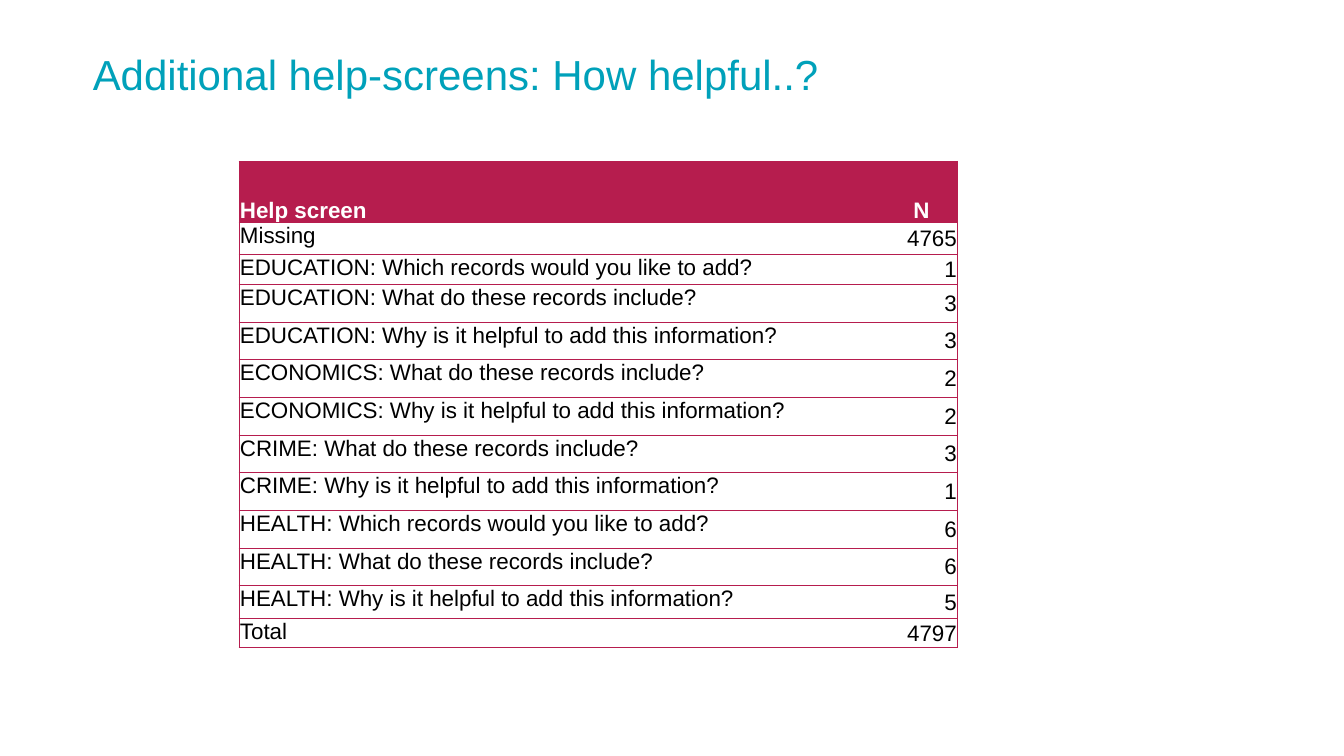
from dataclasses import dataclass

from lxml.etree import SubElement
from pptx import Presentation
from pptx.dml.color import RGBColor
from pptx.enum.text import MSO_ANCHOR, PP_ALIGN
from pptx.oxml.ns import qn
from pptx.util import Inches, Pt


@dataclass(frozen=True)
class Theme:
    font: str = "Arial"
    title_color: str = "00A1BA"
    accent: str = "B61D4E"
    light: str = "FFFFFF"
    dark: str = "000000"
    title_size: int = 30
    table_size: int = 16
    border_width: float = 0.5


THEME = Theme()
HEADINGS = ("Help screen", "N")
HELP_SCREENS = [
    ("Missing", 4765),
    ("EDUCATION: Which records would you like to add?", 1),
    ("EDUCATION: What do these records include?", 3),
    ("EDUCATION: Why is it helpful to add this information?", 3),
    ("ECONOMICS: What do these records include?", 2),
    ("ECONOMICS: Why is it helpful to add this information?", 2),
    ("CRIME: What do these records include?", 3),
    ("CRIME: Why is it helpful to add this information?", 1),
    ("HEALTH: Which records would you like to add?", 6),
    ("HEALTH: What do these records include?", 6),
    ("HEALTH: Why is it helpful to add this information?", 5),
    ("Total", 4797),
]
COLUMN_WIDTHS = (6.41, 0.72)
TABLE_HEIGHT = 4.82
FIRST_HEIGHTS = [0.61, 0.31, 0.3]
LAST_HEIGHTS = [0.33, 0.28]


def write_text(frame, text, size, color, bold=False, align=PP_ALIGN.LEFT, spacing=1.0):
    para = frame.paragraphs[0]
    para.alignment = align
    para.line_spacing = spacing
    span = para.add_run()
    span.text = text
    span.font.name = THEME.font
    span.font.size = Pt(size)
    span.font.bold = bold
    span.font.color.rgb = RGBColor.from_string(color)


def set_borders(cell, visible_sides):
    properties = cell._tc.get_or_add_tcPr()
    for side in "LRTB":
        line = SubElement(properties, qn(f"a:ln{side}"), w=str(Pt(THEME.border_width)))
        if side in visible_sides:
            fill = SubElement(line, qn("a:solidFill"))
            SubElement(fill, qn("a:srgbClr"), val=THEME.accent)
        else:
            SubElement(line, qn("a:noFill"))


def format_cell(cell, text, fill, anchor, sides, **text_format):
    set_borders(cell, sides)
    cell.fill.solid()
    cell.fill.fore_color.rgb = RGBColor.from_string(fill)
    cell.vertical_anchor = anchor
    cell.margin_left = cell.margin_right = cell.margin_top = Inches(0.01)
    cell.margin_bottom = 0
    write_text(cell.text_frame, text, THEME.table_size, **text_format)


def add_title(page, text):
    title = page.shapes.title
    title.left, title.top = Inches(0.92), Inches(0.54)
    title.width, title.height = Inches(11.5), Inches(0.87)
    frame = title.text_frame
    frame.margin_left = frame.margin_right = frame.margin_top = frame.margin_bottom = 0
    frame.vertical_anchor = MSO_ANCHOR.TOP
    frame.word_wrap = True
    write_text(frame, text, THEME.title_size, THEME.title_color, spacing=0.9)


def row_heights():
    middle_count = len(HELP_SCREENS) + 1 - len(FIRST_HEIGHTS) - len(LAST_HEIGHTS)
    middle = (TABLE_HEIGHT - sum(FIRST_HEIGHTS) - sum(LAST_HEIGHTS)) / middle_count
    return FIRST_HEIGHTS + [middle] * middle_count + LAST_HEIGHTS


def add_help_table(page):
    heights = row_heights()
    table = page.shapes.add_table(
        len(heights), len(COLUMN_WIDTHS), Inches(2.37), Inches(1.6),
        Inches(sum(COLUMN_WIDTHS)), Inches(TABLE_HEIGHT),
    ).table
    table.horz_banding = False
    for column, width in zip(table.columns, COLUMN_WIDTHS):
        column.width = Inches(width)
    for row, height in zip(table.rows, heights):
        row.height = Inches(height)

    sides = ("LTB", "RTB")
    heading_aligns = (PP_ALIGN.LEFT, PP_ALIGN.CENTER)
    for column, heading in enumerate(HEADINGS):
        format_cell(table.cell(0, column), heading, THEME.accent, MSO_ANCHOR.BOTTOM,
                    sides[column], color=THEME.light, bold=True,
                    align=heading_aligns[column])

    anchors = (MSO_ANCHOR.TOP, MSO_ANCHOR.MIDDLE)
    aligns = (PP_ALIGN.LEFT, PP_ALIGN.RIGHT)
    for row, values in enumerate(HELP_SCREENS, start=1):
        for column, value in enumerate(values):
            format_cell(table.cell(row, column), str(value), THEME.light,
                        anchors[column], sides[column], color=THEME.dark,
                        align=aligns[column])


def main():
    deck = Presentation()
    deck.slide_width, deck.slide_height = Inches(13.33), Inches(7.5)
    page = deck.slides.add_slide(deck.slide_layouts.get_by_name("Title Only"))
    add_title(page, "Additional help-screens: How helpful..?")
    add_help_table(page)
    deck.save("out.pptx")


if __name__ == "__main__":
    main()
